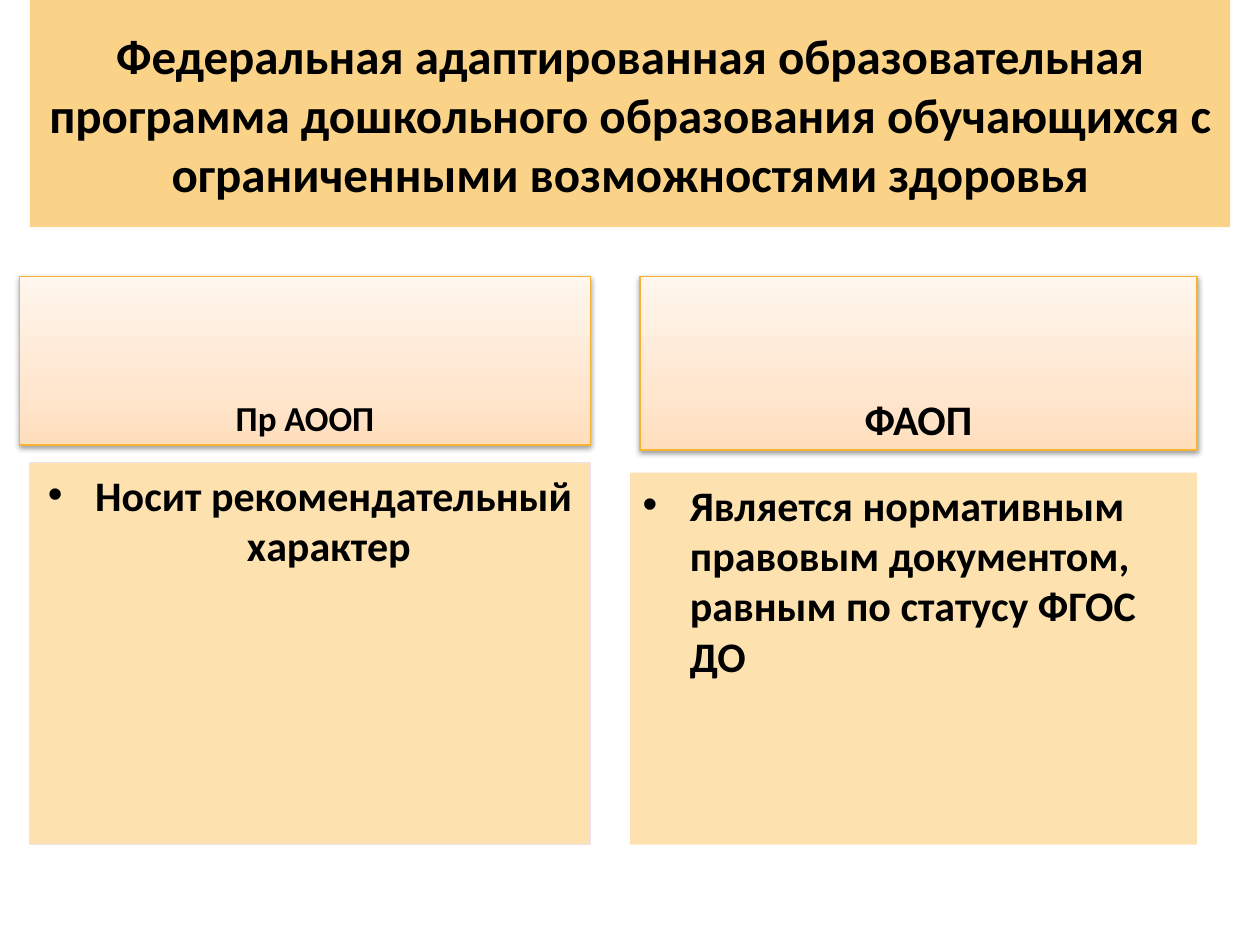
from dataclasses import dataclass

from lxml.etree import SubElement
from pptx import Presentation
from pptx.dml.color import RGBColor
from pptx.enum.text import MSO_ANCHOR, MSO_AUTO_SIZE, PP_ALIGN
from pptx.oxml.ns import qn
from pptx.util import Cm, Pt


@dataclass(frozen=True)
class Theme:
    font: str = "Calibri"
    ink: str = "000000"
    banner: str = "FBD388"
    panel: str = "FDE2B0"
    edge: str = "EEE0F1"
    rim: str = "F8B333"
    fade: tuple = ((0, "FFDEBC"), (35, "FFE7D0"), (100, "FFF6ED"))
    title: int = 28
    body: int = 24
    small: int = 20


THEME = Theme()


def place(shape, left, top, width, height):
    shape.left, shape.top = Cm(left), Cm(top)
    shape.width, shape.height = Cm(width), Cm(height)


def write(shape, text, size, align, anchor):
    frame = shape.text_frame
    frame.text = text
    frame.word_wrap = True
    frame.auto_size = MSO_AUTO_SIZE.NONE
    frame.vertical_anchor = anchor
    para = frame.paragraphs[0]
    para.alignment = align
    font = para.runs[0].font
    font.name, font.size, font.bold = THEME.font, Pt(size), True
    font.color.rgb = RGBColor.from_string(THEME.ink)


def paint(shape, color):
    shape.fill.solid()
    shape.fill.fore_color.rgb = RGBColor.from_string(color)


def outline(shape, color):
    shape.line.color.rgb = RGBColor.from_string(color)
    shape.line.width = Pt(0.75)


def blend(shape):
    shape.fill.gradient()
    shape.fill.gradient_angle = 90
    stops = shape.element.spPr.find(".//" + qn("a:gsLst"))
    for stop in list(stops):
        stops.remove(stop)
    for spot, color in THEME.fade:
        stop = SubElement(stops, qn("a:gs"), pos=str(spot * 1000))
        SubElement(stop, qn("a:srgbClr"), val=color)


def shade(shape):
    effects = SubElement(shape.element.spPr, qn("a:effectLst"))
    shadow = SubElement(
        effects, qn("a:outerShdw"), blurRad=str(Pt(3.1)),
        dist=str(Pt(1.6)), dir="5400000", rotWithShape="0")
    color = SubElement(shadow, qn("a:srgbClr"), val=THEME.ink)
    SubElement(color, qn("a:alpha"), val="38000")


def banner(shape, text, box):
    place(shape, *box)
    paint(shape, THEME.banner)
    write(shape, text, THEME.title, PP_ALIGN.CENTER, MSO_ANCHOR.MIDDLE)


def header(shape, text, size, box):
    place(shape, *box)
    blend(shape)
    outline(shape, THEME.rim)
    shade(shape)
    write(shape, text, size, PP_ALIGN.CENTER, MSO_ANCHOR.BOTTOM)


def panel(shape, text, align, box, edge=None):
    place(shape, *box)
    paint(shape, THEME.panel)
    if edge:
        outline(shape, edge)
    write(shape, text, THEME.body, align, MSO_ANCHOR.TOP)


def main():
    deck = Presentation()
    deck.slide_width, deck.slide_height = Cm(25.4), Cm(19.05)
    slide = deck.slides.add_slide(deck.slide_layouts.get_by_name("Comparison"))
    title, left, first, right, second = slide.placeholders

    banner(title, "Федеральная адаптированная образовательная программа "
           "дошкольного образования обучающихся с ограниченными "
           "возможностями здоровья", (0.6, 0, 24.2, 4.58))
    header(left, "Пр АООП", THEME.small, (0.4, 5.57, 11.5, 3.4))
    panel(first, "Носит рекомендательный характер ", PP_ALIGN.CENTER,
          (0.6, 9.33, 11.3, 7.7), THEME.edge)
    header(right, "ФАОП", THEME.body, (12.9, 5.57, 11.23, 3.5))
    panel(second, "Является нормативным правовым документом, "
          "равным по статусу ФГОС ДО", PP_ALIGN.LEFT,
          (12.7, 9.53, 11.43, 7.5))
    deck.save("out.pptx")


if __name__ == "__main__":
    main()
